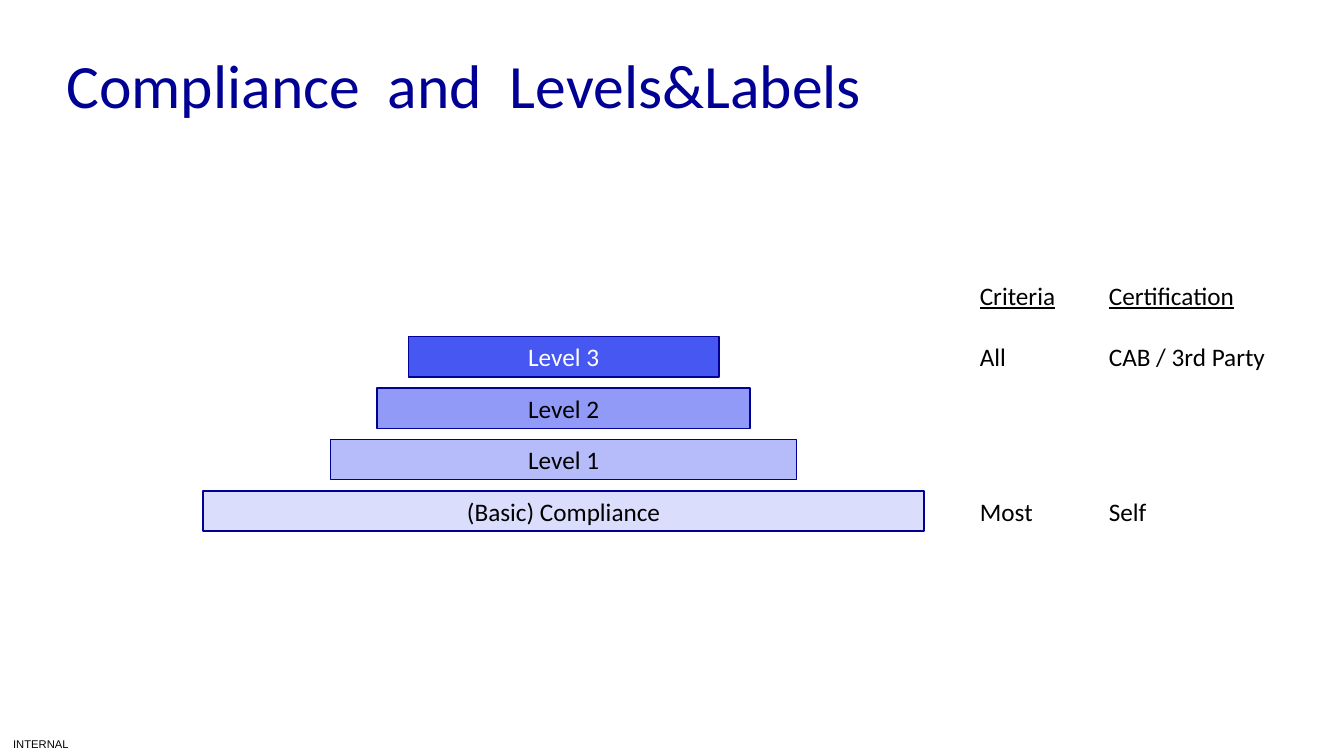
from dataclasses import dataclass

from pptx import Presentation
from pptx.dml.color import RGBColor
from pptx.enum.shapes import MSO_SHAPE
from pptx.enum.text import MSO_ANCHOR, MSO_AUTO_SIZE, PP_ALIGN
from pptx.util import Inches, Pt

COLORS = {
    "navy": "000094",
    "black": "000000",
    "white": "FFFFFF",
    "basic": "DADDFC",
    "level 1": "B5BCF9",
    "level 2": "919AF7",
    "level 3": "4757F1",
}
ROW_HEIGHT = 0.4
ROW_TOPS = [3.34 + 0.51 * row for row in range(4)]
HEADER_TOP = 2.73
PYRAMID_CENTER = 5.59
CRITERIA_LEFT, CERTIFICATION_LEFT = 9.62, 10.9


@dataclass
class Level:
    text: str
    width: float
    fill: str
    text_color: str = "black"


@dataclass
class Label:
    text: str
    left: float
    top: float
    width: float = 1.93
    underline: bool = False


# Pyramid from top to bottom
LEVELS = [
    Level("Level 3", 3.08, "level 3", "white"),
    Level("Level 2", 3.7, "level 2"),
    Level("Level 1", 4.62, "level 1"),
    Level("(Basic) Compliance", 7.15, "basic"),
]

LABELS = [
    Label("Criteria", CRITERIA_LEFT, HEADER_TOP, underline=True),
    Label("Certification", CERTIFICATION_LEFT, HEADER_TOP, underline=True),
    Label("All", CRITERIA_LEFT, ROW_TOPS[0]),
    Label("CAB / 3rd Party", CERTIFICATION_LEFT, ROW_TOPS[0], width=2.13),
    Label("Most", CRITERIA_LEFT, ROW_TOPS[-1]),
    Label("Self", CERTIFICATION_LEFT, ROW_TOPS[-1]),
]


def rgb(name: str) -> RGBColor:
    return RGBColor.from_string(COLORS[name])


def add_text(shape, text: str, size: float = 18, color: str = "black",
             font: str = "Calibri", align=PP_ALIGN.LEFT,
             anchor=MSO_ANCHOR.TOP, underline: bool = False):
    frame = shape.text_frame
    frame.word_wrap = True
    frame.vertical_anchor = anchor
    paragraph = frame.paragraphs[0]
    paragraph.alignment = align
    run = paragraph.add_run()
    run.text = text
    run.font.name = font
    run.font.size = Pt(size)
    run.font.color.rgb = rgb(color)
    if underline:
        run.font.underline = True
    return frame


def add_title(slide, text: str) -> None:
    title = slide.shapes.title
    title.left, title.top = Inches(0.56), Inches(0.5)
    title.width, title.height = Inches(8.49), Inches(0.83)
    frame = add_text(title, text, 44, "navy")
    frame.auto_size = MSO_AUTO_SIZE.NONE
    frame.paragraphs[0].line_spacing = 0.9


def add_level(slide, level: Level, top: float) -> None:
    shape = slide.shapes.add_shape(
        MSO_SHAPE.RECTANGLE, Inches(PYRAMID_CENTER - level.width / 2),
        Inches(top), Inches(level.width), Inches(ROW_HEIGHT))
    shape.shadow.inherit = False
    shape.fill.solid()
    shape.fill.fore_color.rgb = rgb(level.fill)
    shape.line.color.rgb = rgb("navy")
    shape.line.width = Pt(1)
    frame = add_text(shape, level.text, color=level.text_color,
                     align=PP_ALIGN.CENTER)
    frame.auto_size = MSO_AUTO_SIZE.SHAPE_TO_FIT_TEXT


def add_label(slide, label: Label) -> None:
    box = slide.shapes.add_textbox(Inches(label.left), Inches(label.top),
                                   Inches(label.width), Inches(ROW_HEIGHT))
    frame = add_text(box, label.text, underline=label.underline)
    frame.auto_size = MSO_AUTO_SIZE.SHAPE_TO_FIT_TEXT


def add_classification(slide, text: str) -> None:
    box = slide.shapes.add_textbox(Inches(0), Inches(7.26),
                                   Inches(0.81), Inches(0.24))
    frame = add_text(box, text, 8, font="Arial", anchor=MSO_ANCHOR.MIDDLE)
    frame.margin_left = frame.margin_right = 0
    frame.margin_top = frame.margin_bottom = 0
    # The text starts a little inside the slide edge
    frame.margin_left = Inches(0.13)


def main() -> None:
    presentation = Presentation()
    presentation.slide_width = Inches(13.33)
    presentation.slide_height = Inches(7.5)
    slide = presentation.slides.add_slide(presentation.slide_layouts[5])

    add_title(slide, "Compliance  and  Levels&Labels")
    for level, top in zip(LEVELS, ROW_TOPS):
        add_level(slide, level, top)
    for label in LABELS:
        add_label(slide, label)
    add_classification(slide, "INTERNAL")

    presentation.save("out.pptx")


if __name__ == "__main__":
    main()
